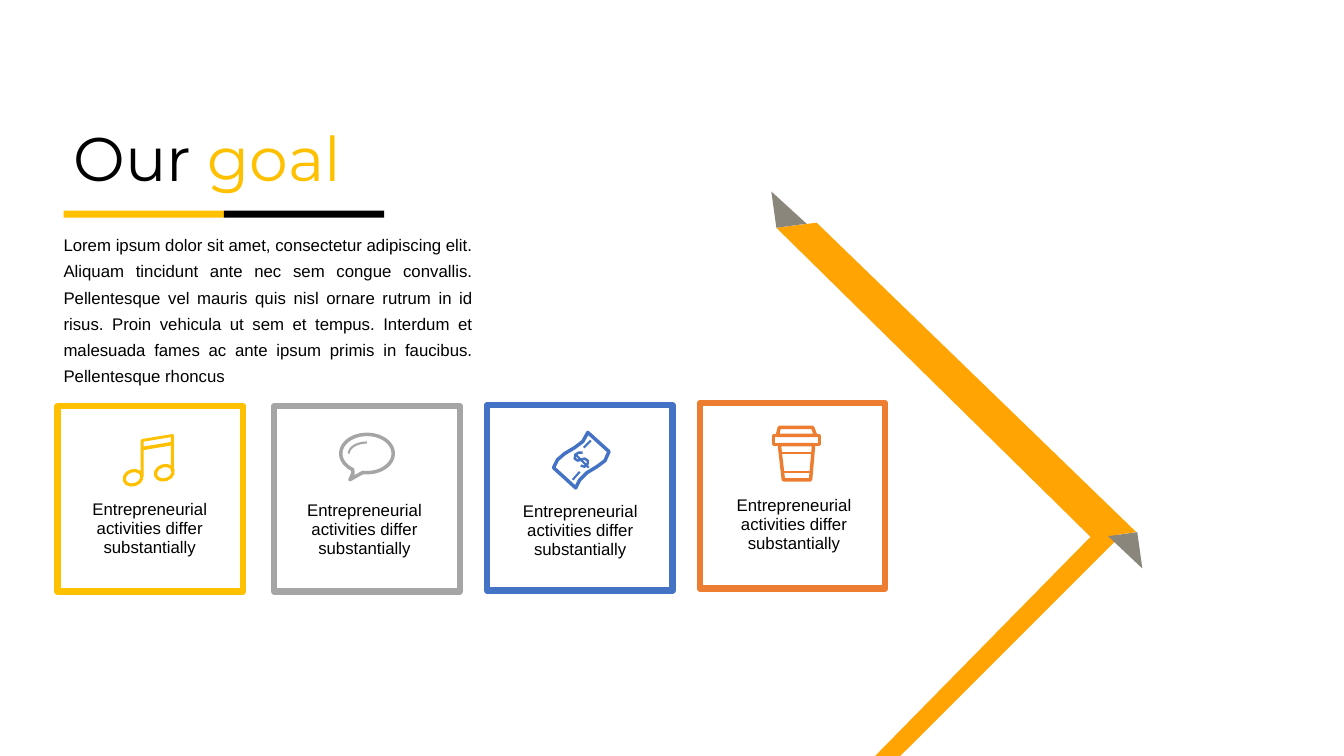
"""Build the 'Our goal' slide with four icon cards and a folded arrow."""
from math import cos, radians, sin

from lxml import etree
from pptx import Presentation
from pptx.dml.color import RGBColor
from pptx.enum.shapes import MSO_CONNECTOR, MSO_SHAPE
from pptx.enum.text import MSO_ANCHOR, PP_ALIGN
from pptx.oxml.ns import qn
from pptx.util import Inches, Pt

RECT, OVAL, LINE = MSO_SHAPE.RECTANGLE, MSO_SHAPE.OVAL, MSO_CONNECTOR.STRAIGHT
TOP, MIDDLE = MSO_ANCHOR.TOP, MSO_ANCHOR.MIDDLE
LEFT, CENTER, JUSTIFY = PP_ALIGN.LEFT, PP_ALIGN.CENTER, PP_ALIGN.JUSTIFY
BLACK = RGBColor(0x00, 0x00, 0x00)
GOLD = RGBColor(0xFF, 0xC0, 0x00)
GRAY = RGBColor(0xA5, 0xA5, 0xA5)
BLUE = RGBColor(0x44, 0x72, 0xC4)
RUST = RGBColor(0xED, 0x7D, 0x31)
AMBER = RGBColor(0xFF, 0xA4, 0x03)
STONE = RGBColor(0x8A, 0x86, 0x7B)

BODY = (
    "Lorem ipsum dolor sit amet, consectetur adipiscing elit. Aliquam tincidunt "
    "ante nec sem congue convallis. Pellentesque vel mauris quis nisl ornare "
    "rutrum in id risus. Proin vehicula ut sem et tempus. Interdum et malesuada "
    "fames ac ante ipsum primis in faucibus. Pellentesque rhoncus"
)
LABEL = "Entrepreneurial activities differ substantially"

deck = Presentation()
deck.slide_width, deck.slide_height = Inches(13.33), Inches(7.5)
slide = deck.slides.add_slide(deck.slide_layouts[5])
shapes = slide.shapes


def trace(points, color, width=0, closed=True):
    """Draw a filled polygon, or an outline when a width is given."""
    spots = [(Inches(x), Inches(y)) for x, y in points]
    pen = shapes.build_freeform(*spots[0], scale=1.0)
    pen.add_line_segments(spots[1:], close=closed)
    form = pen.convert_to_shape()
    form.shadow.inherit = False
    if width:
        form.fill.background()
        form.line.color.rgb = color
        form.line.width = Pt(width)
    else:
        form.fill.solid()
        form.fill.fore_color.rgb = color
        form.line.fill.background()


def write(text, place, align, spacing, inset, anchor):
    """Add a wrapped text box in 12 point Arial."""
    frame = shapes.add_textbox(*map(Inches, place)).text_frame
    frame.word_wrap = True
    frame.vertical_anchor = anchor
    frame.margin_left = frame.margin_right = Inches(inset)
    frame.margin_top = frame.margin_bottom = Inches(inset / 2)
    frame.text = text
    para = frame.paragraphs[0]
    para.alignment, para.line_spacing = align, spacing
    font = para.runs[0].font
    font.name, font.size, font.color.rgb = "Arial", Pt(12), BLACK


title = shapes.title
title.left, title.top = Inches(0.63), Inches(1.24)
title.width, title.height = Inches(6.73), Inches(0.72)
title.text_frame.vertical_anchor = MIDDLE
para = title.text_frame.paragraphs[0]
para.alignment, para.line_spacing = LEFT, 0.9
for word, color in (("Our ", BLACK), ("goal", GOLD)):
    run = para.add_run()
    run.text = word
    run.font.name, run.font.size = "Montserrat", Pt(44)
    run.font.color.rgb = color

for left, color in ((0.63, GOLD), (2.22, BLACK)):
    bar = shapes.add_shape(RECT, Inches(left), Inches(2.09), Inches(1.59), Inches(0.07))
    bar.shadow.inherit = False
    bar.fill.solid()
    bar.fill.fore_color.rgb = color
    bar.line.fill.background()

write(BODY, (0.5, 2.21, 4.32, 1.68), JUSTIFY, 1.3, 0.13, MIDDLE)

arrow = (
    (AMBER, [(10.97, 5.17), (11.11, 5.32), (8.93, 7.5), (8.68, 7.5)]),
    (AMBER, [(7.7, 2.26), (8.1, 2.21), (11.27, 5.28), (10.83, 5.34)]),
    (STONE, [(7.65, 1.9), (7.7, 2.26), (8, 2.22)]),
    (STONE, [(10.99, 5.32), (11.33, 5.64), (11.28, 5.28)]),
)
for color, points in arrow:
    trace(points, color)

cards = (
    (GOLD, 0.57, 4.03, 0.64, 4.91),
    (GRAY, 2.72, 4.03, 2.77, 4.92),
    (BLUE, 4.83, 4.02, 4.91, 4.93),
    (RUST, 6.94, 4, 7.03, 4.87),
)
for color, left, top, text_left, text_top in cards:
    card = shapes.add_shape(RECT, Inches(left), Inches(top), Inches(1.84), Inches(1.84))
    card.shadow.inherit = False
    card.fill.background()
    card.line.color.rgb = color
    card.line.width = Pt(4.5)
    write(LABEL, (text_left, text_top, 1.69, 0.68), CENTER, 0.95, 0.1, TOP)

for left, top in ((1.23, 4.67), (1.54, 4.62)):
    note = shapes.add_shape(OVAL, Inches(left), Inches(top), Inches(0.18), Inches(0.14))
    note.rotation = -18
    note.shadow.inherit = False
    note.fill.background()
    note.line.color.rgb = GOLD
    note.line.width = Pt(2.25)
trace([(1.41, 4.73), (1.41, 4.37), (1.71, 4.32), (1.71, 4.68)], GOLD, 2, False)

turns = [radians(angle) for angle in range(123, 462, 6)]
bubble = [(3.64 + 0.26 * cos(turn), 4.5 + 0.19 * sin(turn)) for turn in turns]
trace(bubble + [(3.54, 4.72), (3.47, 4.76), (3.5, 4.7)], GRAY, 2.5)
turns = [radians(angle) for angle in range(180, 271, 6)]
shine = [(3.64 + 0.18 * cos(turn), 4.5 + 0.11 * sin(turn)) for turn in turns]
trace(shine, GRAY, 1.5, False)

bill = [
    (5.83, 4.29), (6.04, 4.48), (6, 4.57), (5.92, 4.63), (5.82, 4.69), (5.75, 4.76),
    (5.71, 4.84), (5.49, 4.64), (5.53, 4.56), (5.6, 4.5), (5.7, 4.44), (5.78, 4.38),
]
dollar = [
    (5.78, 4.49), (5.74, 4.49), (5.71, 4.51), (5.7, 4.55), (5.73, 4.57),
    (5.8, 4.55), (5.83, 4.57), (5.83, 4.6), (5.8, 4.63), (5.76, 4.62),
]
trace(bill, BLUE, 2.5)
trace(dollar, BLUE, 1.75, False)

cup = (
    [(7.71, 4.32), (7.73, 4.24), (8.06, 4.24), (8.09, 4.32)],
    [(7.67, 4.32), (8.13, 4.32), (8.13, 4.41), (7.67, 4.41)],
    [(7.73, 4.41), (8.07, 4.41), (8.04, 4.76), (7.77, 4.76)],
)
for points in cup:
    trace(points, RUST, 2.5)

strokes = (
    (GOLD, 2.5, 1.41, 4.45, 1.71, 4.4),
    (BLUE, 1.5, 5.7, 4.5, 5.84, 4.64),
    (BLUE, 1.5, 5.68, 4.76, 5.75, 4.68),
    (BLUE, 1.5, 5.79, 4.44, 5.86, 4.37),
    (RUST, 1.5, 7.75, 4.49, 8.05, 4.49),
    (RUST, 1.5, 7.77, 4.68, 8.03, 4.68),
)
for color, width, *ends in strokes:
    stroke = shapes.add_connector(LINE, *map(Inches, ends))
    stroke.line.color.rgb = color
    stroke.line.width = Pt(width)
    etree.SubElement(stroke._element.spPr, qn("a:effectLst"))

deck.save("out.pptx")
